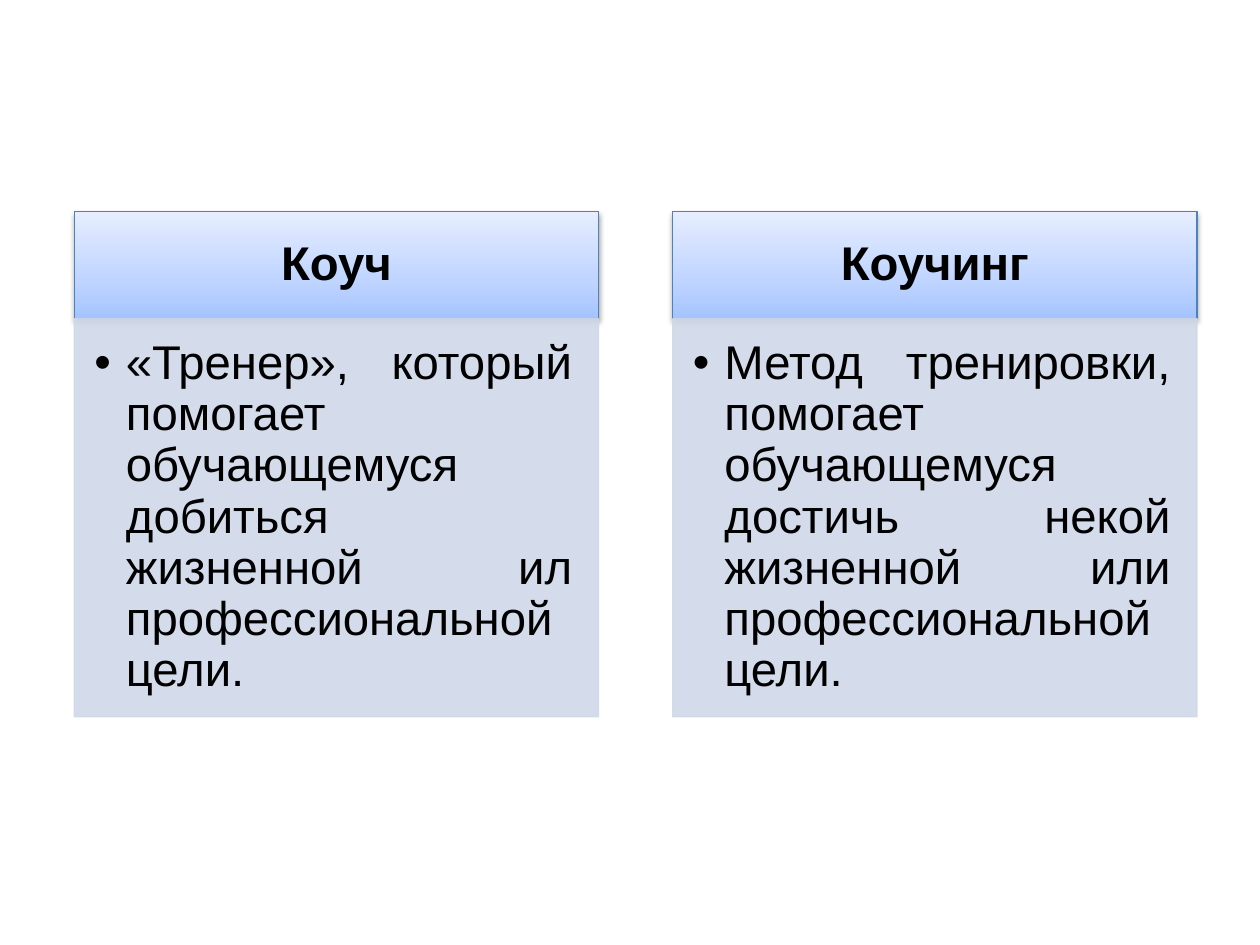
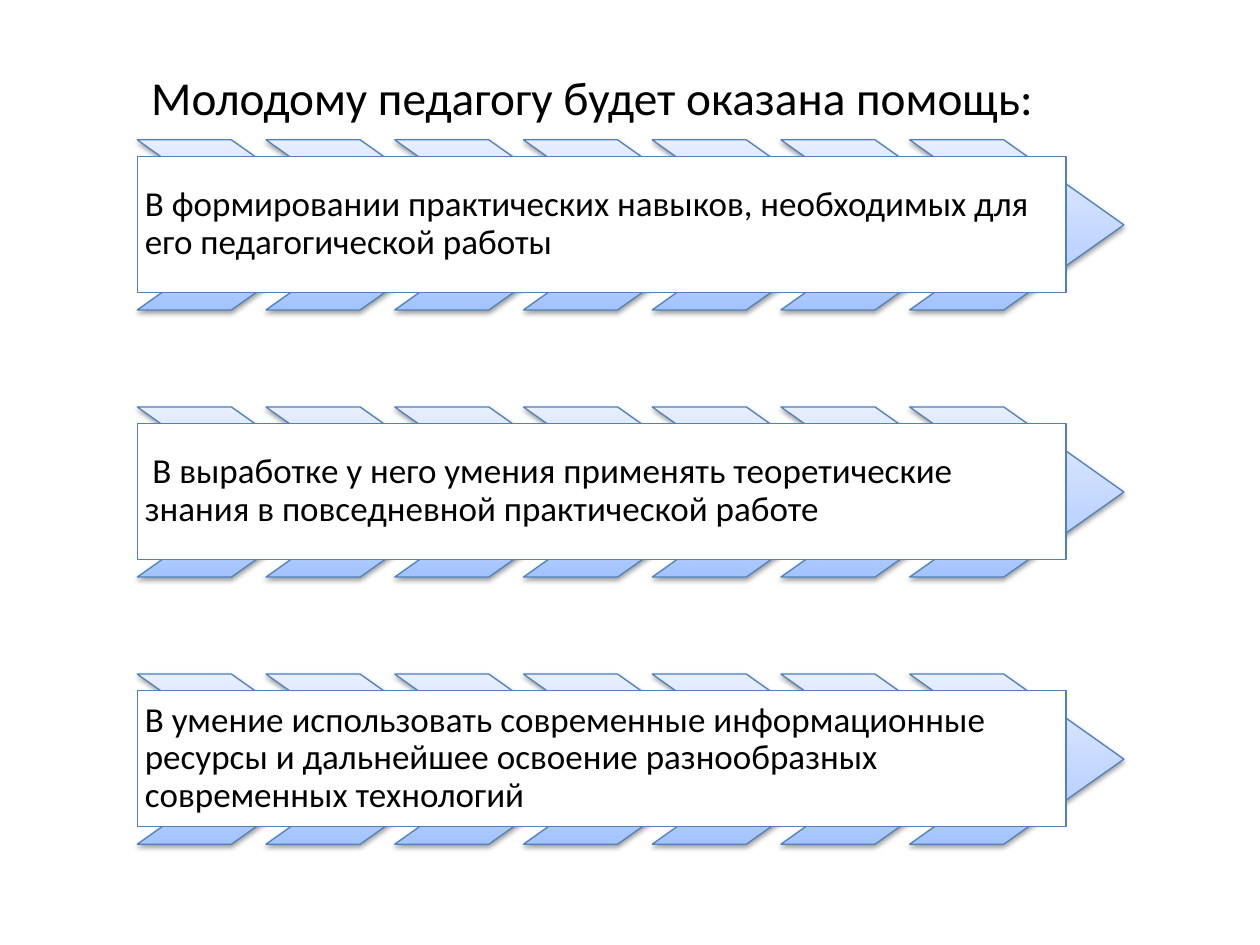
from dataclasses import dataclass

from lxml import etree
from pptx import Presentation
from pptx import util as u
from pptx.dml import color
from pptx.enum import shapes, text
from pptx.oxml import ns


@dataclass(frozen=True)
class Theme:
    """Colours, fonts and type sizes shared by the slides."""
    ink: str = "000000"
    paper: str = "FFFFFF"
    accent: str = "4F81BD"
    panel: str = "D0D8E8"
    gradient: tuple = ((0, "A4C4FF"), (35, "BFD4FF"), (100, "E6EEFF"))
    panel_alpha: int = 90
    shadow_alpha: int = 38
    line_width: float = 0.75
    card_font: str = "Arial"
    list_font: str = "Calibri"
    large: int = 27
    small: int = 20


T = Theme()
CARDS = (
    ("Коуч", "«Тренер», который помогает обучающемуся добиться жизненной "
             "ил профессиональной цели."),
    ("Коучинг", "Метод тренировки, помогает обучающемуся достичь некой "
                "жизненной или профессиональной цели."),
)
HELP_TITLE = "Молодому педагогу будет оказана помощь:"
HELP_ITEMS = (
    ("В формировании практических навыков, необходимых для его "
     "педагогической работы", 0),
    ("В выработке у него умения применять теоретические знания в "
     "повседневной практической работе", 0.06),
    ("В умение использовать современные информационные ресурсы и "
     "дальнейшее освоение разнообразных современных технологий", 0),
)


def rgb(value):
    """Turn a hex string into a colour."""
    return color.RGBColor.from_string(value)


def add_node(parent, tag, **attrs):
    """Append a DrawingML element with the given attributes."""
    return etree.SubElement(parent, ns.qn(tag), {k: str(v) for k, v in attrs.items()})


def add_color(parent, value, alpha=100):
    """Append a colour with an opacity in percent."""
    node = add_node(parent, "a:srgbClr", val=value)
    if alpha < 100:
        add_node(node, "a:alpha", val=alpha * 1000)


def add_box(slide, kind, left, top, width, height, fill, line):
    """Add a preset shape with a solid fill, an outline and no shadow."""
    sp = slide.shapes.add_shape(kind, *map(u.Inches, (left, top, width, height)))
    sp.shadow.inherit = False
    sp.fill.solid()
    sp.fill.fore_color.rgb = rgb(fill)
    sp.line.color.rgb = rgb(line)
    sp.line.width = u.Pt(T.line_width)
    return sp


def add_glossy(slide, kind, left, top, width, height):
    """Add a shape with the blue gradient and a soft shadow below."""
    sp = add_box(slide, kind, left, top, width, height, T.paper, T.accent)
    sp.fill.gradient()
    sp.fill.gradient_angle = 90
    stops = sp._element.spPr.find(".//" + ns.qn("a:gsLst"))
    for stop in list(stops):
        stops.remove(stop)
    for position, value in T.gradient:
        add_color(add_node(stops, "a:gs", pos=position * 1000), value)
    effects = sp._element.spPr.find(ns.qn("a:effectLst"))
    shadow = add_node(effects, "a:outerShdw", blurRad=u.Pt(3.1), dist=u.Pt(1.6),
                      dir=90 * 60000, rotWithShape=0)
    add_color(shadow, T.ink, T.shadow_alpha)
    return sp


def add_panel(slide, left, top, width, height):
    """Add a slightly transparent panel."""
    sp = add_box(slide, shapes.MSO_SHAPE.RECTANGLE, left, top, width, height,
                 T.panel, T.panel)
    for node in sp._element.spPr.iter(ns.qn("a:srgbClr")):
        add_node(node, "a:alpha", val=T.panel_alpha * 1000)
    return sp


def write(sp, words, font, size, insets, align=text.PP_ALIGN.LEFT,
          anchor=text.MSO_ANCHOR.MIDDLE, bold=False, bullet=False, indent=0):
    """Write one formatted paragraph into a shape."""
    tf = sp.text_frame
    tf.word_wrap = True
    tf.auto_size = text.MSO_AUTO_SIZE.NONE
    tf.vertical_anchor = anchor
    tf.margin_left, tf.margin_top, tf.margin_right, tf.margin_bottom = map(
        u.Inches, insets)
    p = tf.paragraphs[0]
    p.alignment = align
    p.line_spacing = 0.9
    pPr = p._p.get_or_add_pPr()
    if bullet:
        p.level = 1
        pPr.set("marL", str(u.Inches(0.25)))
        pPr.set("indent", str(u.Inches(-0.25)))
        add_node(pPr, "a:buFont", typeface=font)
        add_node(pPr, "a:buChar", char="•")
    elif indent:
        pPr.set("indent", str(u.Inches(indent)))
    r = p.add_run()
    r.text = words
    r.font.name = font
    r.font.size = u.Pt(size)
    r.font.bold = bold
    r.font.color.rgb = rgb(T.ink)


def add_card(slide, left, heading, body):
    """Add a heading bar with a bulleted panel below it."""
    top, width, bar_height, body_height = 1.68, 4.16, 0.85, 3.16
    bar = add_glossy(slide, shapes.MSO_SHAPE.RECTANGLE, left, top, width, bar_height)
    write(bar, heading, T.card_font, T.large, (0.21, 0.12, 0.21, 0.12),
          text.PP_ALIGN.CENTER, bold=True)
    panel = add_panel(slide, left, top + bar_height, width, body_height)
    write(panel, body, T.card_font, T.large, (0.16, 0.16, 0.21, 0.24),
          text.PP_ALIGN.JUSTIFY, text.MSO_ANCHOR.TOP, bullet=True)


def add_title(slide, words, left, top, width, height):
    """Place and format the title placeholder."""
    sp = slide.shapes.title
    sp.left, sp.top, sp.width, sp.height = map(u.Inches, (left, top, width, height))
    write(sp, words, T.list_font, T.large, (0.11,) * 4,
          anchor=text.MSO_ANCHOR.BOTTOM)


def add_chevron_row(slide, left, top, words, indent):
    """Add a row of chevrons with a text strip over it."""
    count, pitch = 7, 6.13 / 6
    for i in range(count):
        sp = add_glossy(slide, shapes.MSO_SHAPE.CHEVRON, left + i * pitch, top, 1.7, 1.35)
        sp.adjustments[0] = 0.706
    strip = add_box(slide, shapes.MSO_SHAPE.RECTANGLE, left, top + 0.13, 7.37, 1.08,
                    T.paper, T.accent)
    write(strip, words, T.list_font, T.small, (0.06,) * 4, indent=indent)


def build_cards(prs):
    """Build the slide that defines the two terms."""
    slide = prs.slides.add_slide(prs.slide_layouts[6])
    for i, (heading, body) in enumerate(CARDS):
        add_card(slide, 0.59 + i * 4.75, heading, body)


def build_help(prs):
    """Build the slide that lists the kinds of help."""
    slide = prs.slides.add_slide(prs.slide_layouts[5])
    left = 1.09
    add_title(slide, HELP_TITLE, left, 0.45, 7.28, 0.66)
    for i, (words, indent) in enumerate(HELP_ITEMS):
        add_chevron_row(slide, left, 1.11 + i * 2.12, words, indent)


def main():
    """Build and save the presentation."""
    prs = Presentation()
    prs.slide_width, prs.slide_height = u.Inches(10), u.Inches(7.5)
    build_cards(prs)
    build_help(prs)
    prs.save("out.pptx")


if __name__ == "__main__":
    main()
